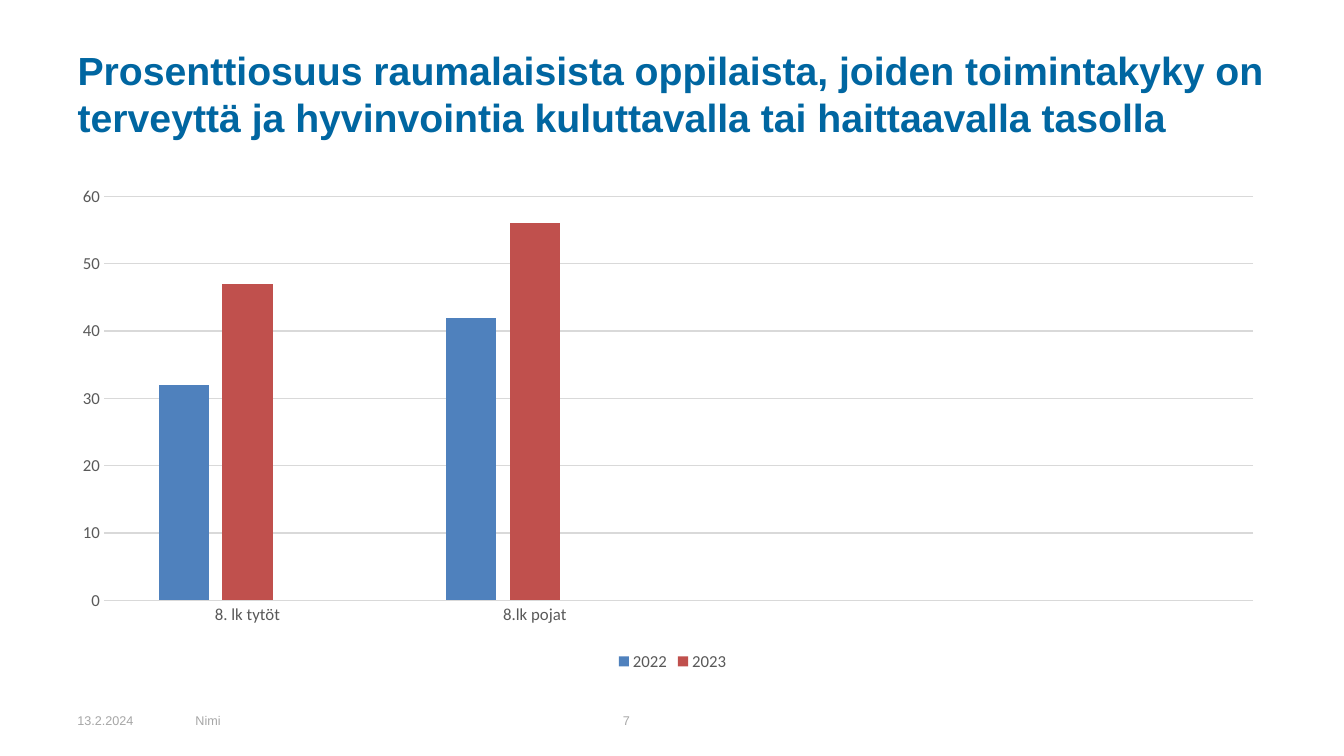
from lxml import etree
from pptx import Presentation
from pptx import util as u
from pptx.chart import data
from pptx.dml import color
from pptx.enum import chart as ch
from pptx.enum import text
from pptx.oxml import parse_xml
from pptx.oxml.ns import nsdecls, qn


def rgb(value):
    """Turn a hex string into a colour."""
    return color.RGBColor.from_string(value)


class Deck:
    """Hold the style and current slide; lengths are columns and half-inch rows."""

    MARGIN, COLUMN, ROW = 0.67, 1, 0.5
    TITLE = {"name": "Arial", "size": u.Pt(28), "bold": True}
    FOOTER = {"name": "Arial", "size": u.Pt(9)}
    LABEL = {"name": "Calibri", "size": u.Pt(12)}
    BLUE, PALE, GREY, RULE = "0066A1", "A6A6A6", "595959", "D9D9D9"

    def __init__(self):
        """Open a widescreen deck with one title-only slide."""
        self.deck = Presentation()
        self.deck.slide_width = u.Inches(13.33)
        self.deck.slide_height = u.Inches(7.5)
        self.slide = self.deck.slides.add_slide(self.deck.slide_layouts[5])

    def area(self, column, row, columns, rows):
        """Convert a grid area to left, top, width and height."""
        return (u.Inches(self.MARGIN + column * self.COLUMN), u.Inches(row * self.ROW),
                u.Inches(columns * self.COLUMN), u.Inches(rows * self.ROW))

    def style(self, font, values, shade):
        """Apply format values and a colour to a font."""
        for key, value in values.items():
            setattr(font, key, value)
        font.color.rgb = rgb(shade)

    def put_words(self, box, words, values, shade):
        """Fill a box with one left-aligned, vertically centred paragraph."""
        frame = box.text_frame
        settings = {"word_wrap": True, "auto_size": text.MSO_AUTO_SIZE.NONE,
                    "vertical_anchor": text.MSO_ANCHOR.MIDDLE}
        for key, value in settings.items():
            setattr(frame, key, value)
        line = frame.paragraphs[0]
        line.alignment = text.PP_ALIGN.LEFT
        phrase = line.add_run()
        phrase.text = words
        self.style(phrase.font, values, shade)

    def title(self, words, *area):
        """Place and fill the title placeholder."""
        heading = self.slide.shapes.title
        sides = ("left", "top", "width", "height")
        for side, length in zip(sides, self.area(*area)):
            setattr(heading, side, length)
        self.put_words(heading, words, self.TITLE, self.BLUE)

    def footer(self, words, *area):
        """Add a small grey footer text."""
        box = self.slide.shapes.add_textbox(*self.area(*area))
        self.put_words(box, words, self.FOOTER, self.PALE)

    def columns(self, groups, series, frame, *area):
        """Add a clustered column chart; a series without values only takes up room."""
        figures = data.CategoryChartData()
        figures.categories = groups
        for name, values, _ in series:
            figures.add_series(name, values)
        chart = self.slide.shapes.add_chart(
            ch.XL_CHART_TYPE.COLUMN_CLUSTERED, *self.area(*area), figures).chart
        chart.has_title = False
        self.style(chart.font, self.LABEL, self.GREY)
        plot = chart.plots[0]
        for key, value in {"gap_width": 219, "overlap": -27, "vary_by_categories": False}.items():
            setattr(plot, key, value)
        for bars, (_, _, shade) in zip(plot.series, series):
            bars.format.fill.solid()
            bars.format.fill.fore_color.rgb = rgb(shade)
        self.axes(chart)
        self.legend(chart, [i for i, (_, values, _) in enumerate(series) if not any(values)])
        self.frame(chart, frame)

    def axes(self, chart):
        """Format both axes and the gridlines."""
        for axis in (chart.category_axis, chart.value_axis):
            axis.major_tick_mark = axis.minor_tick_mark = ch.XL_TICK_MARK.NONE
            self.style(axis.tick_labels.font, self.LABEL, self.GREY)
        scale = chart.value_axis
        for key, value in {"minimum_scale": 0, "maximum_scale": 60, "major_unit": 10}.items():
            setattr(scale, key, value)
        scale.format.line.fill.background()
        for rule in (chart.category_axis.format.line, scale.major_gridlines.format.line):
            rule.color.rgb = rgb(self.RULE)
            rule.width = u.Pt(0.75)

    def legend(self, chart, left_out):
        """Put the legend below, without the entries left out."""
        chart.has_legend = True
        key = chart.legend
        key.position = ch.XL_LEGEND_POSITION.BOTTOM
        key.include_in_layout = False
        self.style(key.font, self.LABEL, self.GREY)
        place = key._element.find(qn("c:legendPos"))
        for index in reversed(left_out):
            place.addnext(parse_xml(
                f'<c:legendEntry {nsdecls("c")}><c:idx val="{index}"/>'
                '<c:delete val="1"/></c:legendEntry>'))

    def frame(self, chart, shares):
        """Fix the inner plot area as shares of the chart."""
        area = chart._chartSpace.chart.plotArea
        for old in area.findall(qn("c:layout")):
            area.remove(old)
        layout = parse_xml(f'<c:layout {nsdecls("c")}><c:manualLayout/></c:layout>')
        pairs = [("layoutTarget", "inner"), ("xMode", "edge"), ("yMode", "edge")]
        for tag, value in pairs + list(zip("xywh", shares)):
            etree.SubElement(layout[0], qn(f"c:{tag}")).set("val", str(value))
        area.insert(0, layout)


def main():
    """Build the slide on pupils' functional ability."""
    deck = Deck()
    deck.title("Prosenttiosuus raumalaisista oppilaista, joiden toimintakyky on "
               "terveyttä ja hyvinvointia kuluttavalla tai haittaavalla tasolla",
               0, 0.6, 12, 2.5)
    deck.columns(["8. lk tytöt", "8.lk pojat", "", ""],
                 [("2022", (32, 42, None, None), "4F81BD"),
                  ("2023", (47, 56, None, None), "C0504D"),
                  ("Sarake1", (None,) * 4, "9BBB59")],
                 (0.03, 0.04, 0.95, 0.81), 0, 3.5, 12, 9.9)
    for words, column, width in (("13.2.2024", 0, 1.17), ("Nimi", 1.17, 4.22), ("7", 5.41, 3.11)):
        deck.footer(words, column, 13.9, width, 0.8)
    deck.deck.save("out.pptx")


if __name__ == "__main__":
    main()
